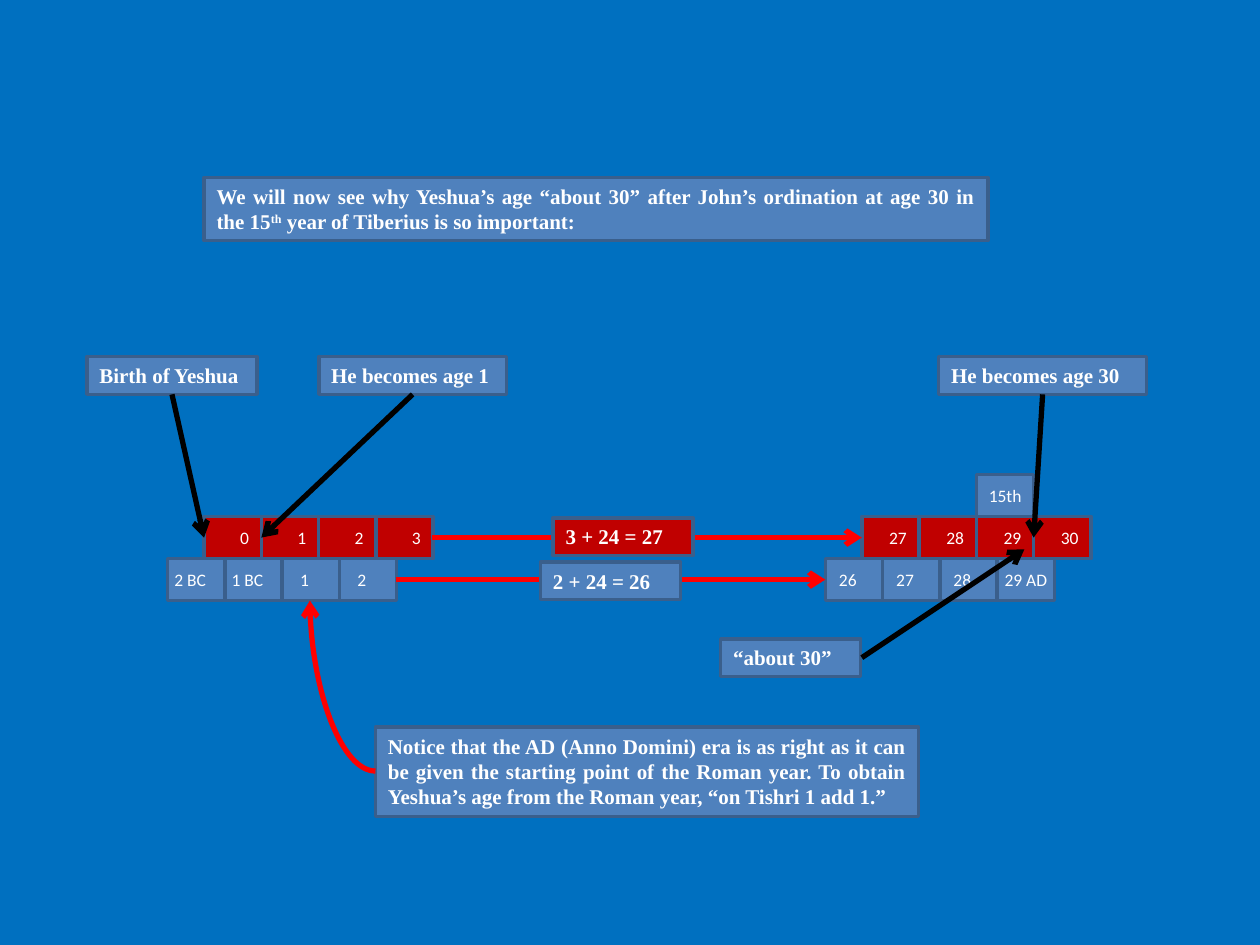
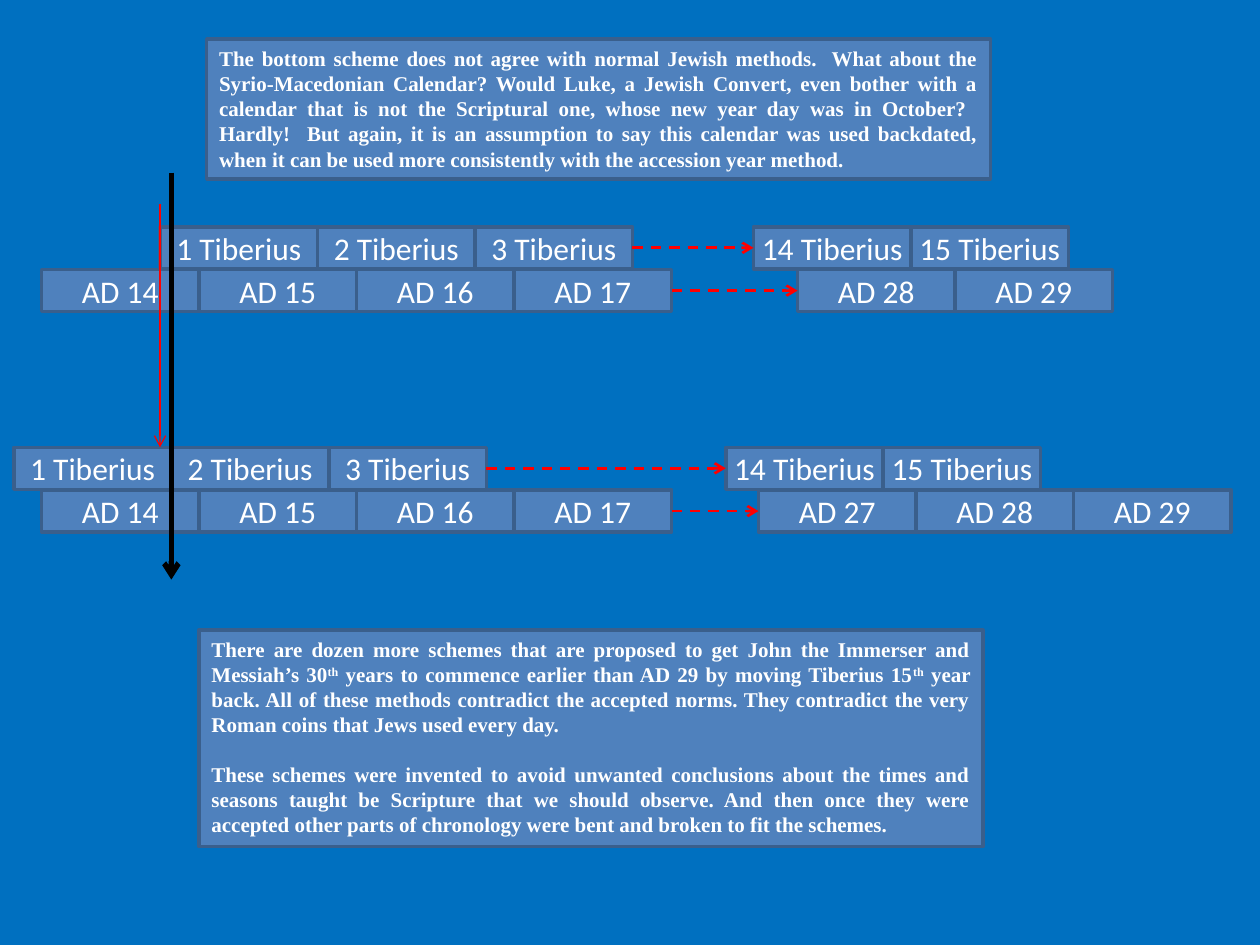
from pptx import Presentation
from pptx import util as u
from pptx.dml import color as c
from pptx.enum import dml, shapes, text as t
from pptx.oxml import ns
from lxml import etree

WIDTH, HEIGHT = 10, 7.5
ROW = HEIGHT / 22.5
AGE_COLUMN = WIDTH / 22
YEAR_COLUMN = WIDTH / 8
LINE = 0.3  # height of a one-line note

COLOURS = {"ground": "0070C0", "blue": "4F81BD", "border": "3A5F8C",
           "crimson": "C00000", "red": "FF0000", "black": "000000", "white": "FFFFFF"}
RGB = {name: c.RGBColor.from_string(value) for name, value in COLOURS.items()}
NOTE = {"font": "Times New Roman", "size": 12, "bold": True, "align": t.PP_ALIGN.JUSTIFY,
        "anchor": t.MSO_ANCHOR.TOP, "insets": (0.1, 0.1), "grow": True}


def add_box(slide, text, at, fill="blue", font="Calibri", size=10, bold=False,
            align=t.PP_ALIGN.CENTER, anchor=t.MSO_ANCHOR.MIDDLE, insets=(0, 0), grow=False):
    """Bordered box; text between carets is superscript, a newline starts a paragraph."""
    shape = slide.shapes.add_shape(shapes.MSO_SHAPE.RECTANGLE, *map(u.Inches, at))
    shape.shadow.inherit = False
    shape.fill.solid()
    shape.fill.fore_color.rgb = RGB[fill]
    shape.line.color.rgb = RGB["border"]
    shape.line.width = u.Pt(2)
    frame = shape.text_frame
    frame.word_wrap = True
    frame.vertical_anchor = anchor
    frame.margin_left, frame.margin_right = map(u.Inches, insets)
    if grow:
        frame.auto_size = t.MSO_AUTO_SIZE.SHAPE_TO_FIT_TEXT
    for index, words in enumerate(text.split("\n")):
        paragraph = frame.add_paragraph() if index else frame.paragraphs[0]
        paragraph.alignment = align
        if index:
            paragraph.space_before = u.Pt(14)
        for position, piece in enumerate(words.split("^")):
            run = paragraph.add_run()
            run.text = piece
            run.font.name, run.font.size, run.font.bold = font, u.Pt(size), bold
            run.font.color.rgb = RGB["white"]
            if position % 2:
                run.font._element.set("baseline", "30000")


def add_arrow(slide, start, end, colour="black", width=3, dashed=False, curved=False):
    kind = shapes.MSO_CONNECTOR.CURVE if curved else shapes.MSO_CONNECTOR.STRAIGHT
    connector = slide.shapes.add_connector(kind, *map(u.Inches, (*start, *end)))
    connector.line.color.rgb = RGB[colour]
    connector.line.width = u.Pt(width)
    if dashed:
        connector.line.dash_style = dml.MSO_LINE.DASH
    properties = connector._element.spPr
    if curved:
        properties.find(ns.qn("a:prstGeom")).set("prst", "curvedConnector2")
    etree.SubElement(connector.line._get_or_add_ln(), ns.qn("a:tailEnd"), type="arrow")
    etree.SubElement(properties, ns.qn("a:effectLst"))


presentation = Presentation()
presentation.slide_width, presentation.slide_height = u.Inches(WIDTH), u.Inches(HEIGHT)
ages, schemes = [presentation.slides.add_slide(presentation.slide_layouts[6]) for _ in range(2)]
for slide in (ages, schemes):
    slide.background.fill.solid()
    slide.background.fill.fore_color.rgb = RGB["ground"]

# Slide 1: rows of Roman years and of ages, each in an early and a late group
age_top = 4.1
year_top = age_top + ROW
age_middle, year_middle = age_top + ROW / 2, year_top + ROW / 2
birth, late_age = 1.62, 6.84
for left, top, fill, align, labels in (
        (1.33, year_top, "blue", t.PP_ALIGN.CENTER, ("2 BC", "1 BC", "1", "2")),
        (6.55, year_top, "blue", t.PP_ALIGN.CENTER, ("26", "27", "28", "29 AD")),
        (birth, age_top, "crimson", t.PP_ALIGN.RIGHT, ("0", "1", "2", "3")),
        (late_age, age_top, "crimson", t.PP_ALIGN.RIGHT, ("27", "28", "29", "30"))):
    for column, label in enumerate(labels):
        add_box(ages, label, (left + column * AGE_COLUMN, top, AGE_COLUMN, ROW), fill=fill,
                align=align, insets=(0, 0 if label == "29 AD" else 0.1))
add_box(ages, "15th", (late_age + 2 * AGE_COLUMN, age_top - ROW, AGE_COLUMN, ROW))
add_arrow(ages, (3.43, age_middle), (late_age, age_middle), "red")
add_arrow(ages, (3.14, year_middle), (6.55, year_middle), "red")

# Notes
for words, at, fill in (
        ("We will now see why Yeshua’s age “about 30” after John’s ordination at age 30 in "
         "the 15^th^ year of Tiberius is so important:", (birth, 1.41, 6.22, 0.5), "blue"),
        ("“about 30”", (5.72, 5.07, 1.11, LINE), "blue"),
        ("3 + 24 = 27", (4.39, 4.11, 1.11, LINE), "crimson"),
        ("2 + 24 = 26", (4.29, 4.46, 1.11, LINE), "blue"),
        ("Notice that the AD (Anno Domini) era is as right as it can be given the starting "
         "point of the Roman year. To obtain Yeshua’s age from the Roman year, “on Tishri 1 "
         "add 1.”", (2.98, 5.77, 4.31, 0.71), "blue")):
    add_box(ages, words, at, fill=fill, **NOTE)

# Birthday labels, each with an arrow to the start of its year
for words, left, width, target in (
        ("Birth of Yeshua", 0.69, 1.35, birth),
        ("He becomes age 1", 2.53, 1.49, birth + AGE_COLUMN),
        ("He becomes age 30", 7.45, 1.65, late_age + 3 * AGE_COLUMN)):
    add_box(ages, words, (left, 2.83, width, LINE), **NOTE)
    add_arrow(ages, (left + width / 2, 2.83 + LINE), (target, age_middle))
add_arrow(ages, (late_age, 5.22), (8.13, 4.36))
add_arrow(ages, (2.98, 6.12), (2.46, year_top + ROW), "red", curved=True)

# Slide 2: two schemes, each a row of regnal years over a row of calendar years
reigns = ("1 Tiberius", "2 Tiberius", "3 Tiberius")
late_reigns = ("14 Tiberius", "15 Tiberius")
years = ("AD 14", "AD 15", "AD 16", "AD 17")
for top, left, late_left, early, late in (
        (2.14, 0.33, 6.33, years, ("AD 28", "AD 29")),
        (1.8, 1.27, 5.98, reigns, late_reigns),
        (3.89, 0.33, 6.02, years, ("AD 27", "AD 28", "AD 29")),
        (3.55, 0.11, 5.76, reigns, late_reigns)):
    for start, labels in ((left, early), (late_left, late)):
        for column, label in enumerate(labels):
            add_box(schemes, label, (start + column * YEAR_COLUMN, top, YEAR_COLUMN, ROW), size=18)
    add_arrow(schemes, (left + len(early) * YEAR_COLUMN, top + ROW / 2),
              (late_left, top + ROW / 2), "red", 1.5, dashed=True)

# Vertical markers
add_arrow(schemes, (1.36, 1.37), (1.36, 4.6))
add_arrow(schemes, (1.27, 1.62), (1.27, 3.55), "red", 0.75)

# Comments above and below
add_box(schemes, "The bottom scheme does not agree with normal Jewish methods.  What about the "
        "Syrio-Macedonian Calendar? Would Luke, a Jewish Convert, even bother with a calendar "
        "that is not the Scriptural one, whose new year day was in October?  Hardly!  But again, "
        "it is an assumption to say this calendar was used backdated, when it can be used more "
        "consistently with the accession year method.", (1.64, 0.31, 6.22, 1.11), **NOTE)
add_box(schemes, "There are dozen more schemes that are proposed to get John the Immerser and "
        "Messiah’s 30^th^ years to commence earlier than AD 29 by moving Tiberius 15^th^ year "
        "back. All of these methods contradict the accepted norms. They contradict the very "
        "Roman coins that Jews used every day.\n"
        "These schemes were invented to avoid unwanted conclusions about the times and seasons "
        "taught be Scripture that we should observe. And then once they were accepted other "
        "parts of chronology were bent and broken to fit the schemes.",
        (1.58, 5, 6.22, 1.72), **NOTE)

presentation.save("out.pptx")
